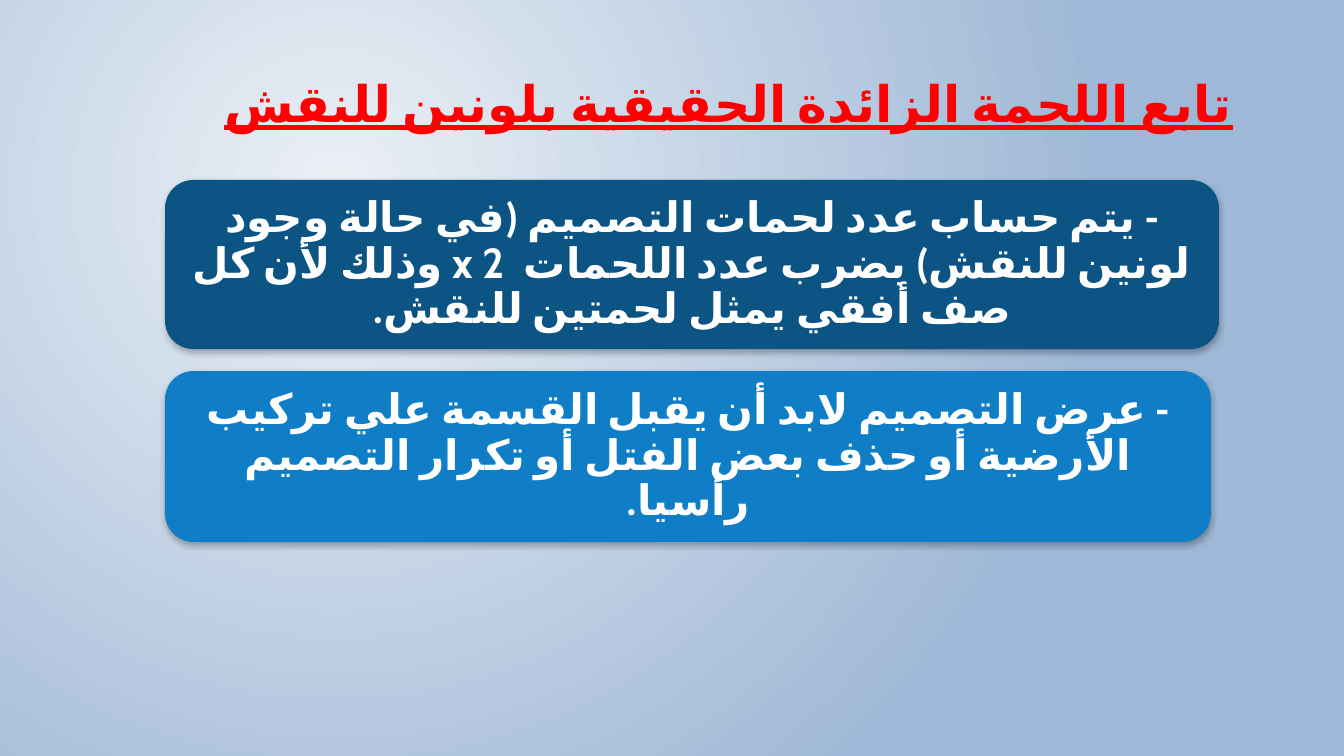
from lxml.etree import SubElement
from pptx import Presentation
from pptx.dml.color import RGBColor
from pptx.enum.shapes import MSO_SHAPE as Shape
from pptx.enum.text import MSO_ANCHOR as Anchor, MSO_AUTO_SIZE as AutoSize, PP_ALIGN as Align
from pptx.oxml.ns import qn
from pptx.util import Pt

RED = RGBColor(0xFF, 0x00, 0x00)
WHITE = RGBColor(0xFF, 0xFF, 0xFF)
BLUE = RGBColor(0x10, 0x7E, 0xC6)
NAVY = RGBColor(0x0B, 0x54, 0x84)
GLOW = RGBColor(0xEB, 0xF0, 0xF5)
HAZE = RGBColor(0x9F, 0xB8, 0xD7)

SLIDE_SIZE = (1344, 756)
LANGUAGE = "ar-EG"
ARABIC_FONT = "Calibri"
TITLE = "تابع اللحمة الزائدة الحقيقية بلونين للنقش"
TITLE_BOX = (101, 69, 1142, 74)
CARDS = [
    ("- عرض التصميم لابد أن يقبل القسمة علي تركيب الأرضية أو حذف بعض الفتل أو تكرار التصميم رأسيا.",
     (165, 371, 1046, 171), BLUE, "Calibri"),
    ("- يتم حساب عدد لحمات التصميم (في حالة وجود لونين للنقش) بضرب عدد اللحمات  x 2 وذلك لأن كل صف أفقي يمثل لحمتين للنقش.",
     (165, 180, 1054, 169), NAVY, "Cabin"),
]
CARD_INSET = 12


def px(length):
    """Turn slide pixels into EMU."""
    return round(length * 914400 / 100.8)


def write_text(frame, text, *, font, size, color, align, underline=None):
    """Write one bold right-to-left Arabic paragraph into a text frame."""
    frame.word_wrap = True
    frame.auto_size = AutoSize.NONE
    frame.vertical_anchor = Anchor.MIDDLE
    paragraph = frame.paragraphs[0]
    paragraph.alignment = align
    paragraph.line_spacing = 0.9
    paragraph._p.get_or_add_pPr().set("rtl", "1")
    run = paragraph.add_run()
    run.text = text
    run.font.name = font
    run.font.size = Pt(size)
    run.font.bold = True
    run.font.underline = underline
    run.font.color.rgb = color
    properties = run.font._element
    properties.set("lang", LANGUAGE)
    SubElement(properties, qn("a:cs"), typeface=ARABIC_FONT)


def paint_background(slide):
    """Fill the slide with a circular glow."""
    fill = slide.background.fill
    fill.gradient()
    for stop, color in zip(fill.gradient_stops, (GLOW, HAZE)):
        stop.color.rgb = color
    gradient = slide._element.find(".//" + qn("a:gradFill"))
    gradient.remove(gradient.find(qn("a:lin")))
    circle = SubElement(gradient, qn("a:path"), path="circle")
    SubElement(circle, qn("a:fillToRect"), l="50000", t="50000", r="100000", b="100000")


def add_card(slide, text, box, color, font):
    """Add a rounded card with a soft shadow below it."""
    card = slide.shapes.add_shape(Shape.ROUNDED_RECTANGLE, *map(px, box))
    card.fill.solid()
    card.fill.fore_color.rgb = color
    card.line.fill.background()
    card.shadow.inherit = False
    effects = card._element.spPr.find(qn("a:effectLst"))
    shadow = SubElement(effects, qn("a:outerShdw"), blurRad=str(Pt(4)), dist=str(Pt(2)),
                        dir="5400000", rotWithShape="0")
    shadow_color = SubElement(shadow, qn("a:srgbClr"), val="000000")
    SubElement(shadow_color, qn("a:alpha"), val="28000")
    frame = card.text_frame
    frame.margin_left = frame.margin_right = px(CARD_INSET)
    frame.margin_top = frame.margin_bottom = px(CARD_INSET)
    write_text(frame, text, font=font, size=30, color=WHITE, align=Align.CENTER)


def main():
    """Build the slide and save it."""
    presentation = Presentation()
    presentation.slide_width, presentation.slide_height = map(px, SLIDE_SIZE)
    slide = presentation.slides.add_slide(presentation.slide_layouts[5])
    paint_background(slide)
    title = slide.shapes.title
    title.left, title.top, title.width, title.height = map(px, TITLE_BOX)
    write_text(title.text_frame, TITLE, font="Calibri", size=36, color=RED,
               align=Align.RIGHT, underline=True)
    for card in CARDS:
        add_card(slide, *card)
    presentation.save("out.pptx")


if __name__ == "__main__":
    main()
